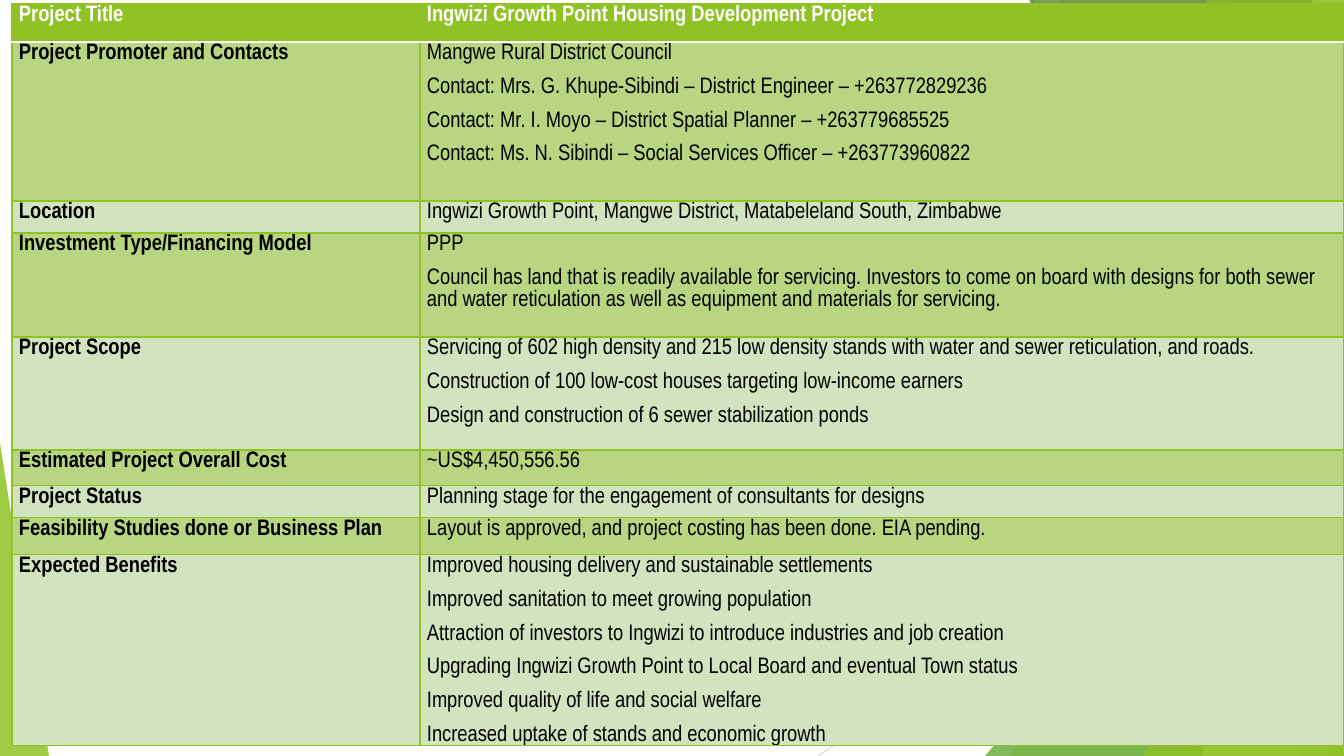
from lxml import etree
from pptx import Presentation
from pptx import util as u
from pptx.dml.color import RGBColor
from pptx.enum import shapes
from pptx.oxml.ns import qn

PX = 914400 / 100.8  # EMU in one px
WIDTH, HEIGHT = 1344, 756
COLORS = {
    "green": "90C226", "leaf": "54A021", "forest": "3F7819", "lime": "C0E474",
    "band_dark": "B8D682", "band_light": "D2E4BF",
    "line_dark": "BFBFBF", "line_light": "D9D9D9",
    "white": "FFFFFF", "black": "000000",
}


def write_text(text_frame, lines, size=16, font="Arial Narrow", color="black", bold=False):
    for index, line in enumerate(lines):
        paragraph = text_frame.paragraphs[0] if index == 0 else text_frame.add_paragraph()
        paragraph.line_spacing = 1.07
        paragraph.space_after = u.Pt(8)
        run = paragraph.add_run()
        run.text = line
        run.font.size = u.Pt(size)
        run.font.name = font
        run.font.bold = bold
        run.font.color.rgb = RGBColor.from_string(COLORS[color])


def paint(shape, color, opacity):
    shape.shadow.inherit = False
    shape.line.fill.background()
    shape.fill.solid()
    shape.fill.fore_color.rgb = RGBColor.from_string(COLORS[color])
    color_element = shape._element.spPr.find(qn("a:solidFill"))[0]
    etree.SubElement(color_element, qn("a:alpha"), val=str(opacity * 1000))


presentation = Presentation()
presentation.slide_width = round(WIDTH * PX)
presentation.slide_height = round(HEIGHT * PX)
slide = presentation.slides.add_slide(presentation.slide_layouts[6])

# Thin background lines
for ends, color in [((1033, 0, 1167, HEIGHT), "line_dark"),
                    ((WIDTH, 406, 818, HEIGHT), "line_light")]:
    connector = slide.shapes.add_connector(
        shapes.MSO_CONNECTOR.STRAIGHT, *[round(value * PX) for value in ends])
    connector.line.color.rgb = RGBColor.from_string(COLORS[color])
    connector.line.width = u.Pt(0.75)
    etree.SubElement(connector._element.spPr, qn("a:effectLst"))

# Translucent facets: slanted bands reaching the right edge, and triangles
FACETS = [
    ("band", (1238, 1012), "green", 30),
    ("band", (1058, 1192), "green", 20),
    ("triangle", (985, 336, 359, 420, 1), "leaf", 72),
    ("band", (1029, 1301), "forest", 70),
    ("band", (1313, 1202), "lime", 70),
    ("band", (1206, 1329), "green", 65),
    ("triangle", (1143, 396, 201, 360, 1), "green", 80),
    ("triangle", (0, 443, 49, 313, 0), "green", 85),
]
for kind, geometry, color, opacity in FACETS:
    if kind == "band":
        top_x, bottom_x = geometry
        builder = slide.shapes.build_freeform(top_x, -1, scale=PX)
        builder.add_line_segments([(WIDTH, -1), (WIDTH, HEIGHT), (bottom_x, HEIGHT)])
        facet = builder.convert_to_shape()
    else:
        *box, apex = geometry
        facet = slide.shapes.add_shape(
            shapes.MSO_SHAPE.ISOSCELES_TRIANGLE, *[round(value * PX) for value in box])
        facet.adjustments[0] = apex
    paint(facet, color, opacity)

# Project table: row height, label, details
ROWS = [
    (38, "Project Title", ["Ingwizi Growth Point Housing Development Project"]),
    (159, "Project Promoter and Contacts", [
        "Mangwe Rural District Council",
        "Contact: Mrs. G. Khupe-Sibindi – District Engineer – +263772829236",
        "Contact: Mr. I. Moyo – District Spatial Planner – +263779685525",
        "Contact: Ms. N. Sibindi – Social Services Officer – +263773960822"]),
    (32, "Location", ["Ingwizi Growth Point, Mangwe District, Matabeleland South, Zimbabwe"]),
    (104, "Investment Type/Financing Model", [
        "PPP",
        "Council has land that is readily available for servicing. Investors to come on board "
        "with designs for both sewer and water reticulation as well as equipment and materials "
        "for servicing."]),
    (113, "Project Scope", [
        "Servicing of 602 high density and 215 low density stands with water and sewer "
        "reticulation, and roads.",
        "Construction of 100 low-cost houses targeting low-income earners",
        "Design and construction of 6 sewer stabilization ponds"]),
    (36, "Estimated Project Overall Cost", ["~US$4,450,556.56"]),
    (32, "Project Status", ["Planning stage for the engagement of consultants for designs"]),
    (37, "Feasibility Studies done or Business Plan", [
        "Layout is approved, and project costing has been done. EIA pending."]),
    (191, "Expected Benefits", [
        "Improved housing delivery and sustainable settlements",
        "Improved sanitation to meet growing population",
        "Attraction of investors to Ingwizi to introduce industries and job creation",
        "Upgrading Ingwizi Growth Point to Local Board and eventual Town status",
        "Improved quality of life and social welfare",
        "Increased uptake of stands and economic growth"]),
]
COLUMNS = [408, 924]
table_height = sum(height for height, _, _ in ROWS)
table = slide.shapes.add_table(
    len(ROWS), len(COLUMNS),
    *[round(value * PX) for value in (12, 4, sum(COLUMNS), table_height)]).table
table.horz_banding = False
for column, width in zip(table.columns, COLUMNS):
    column.width = round(width * PX)

for row_index, (height, label, details) in enumerate(ROWS):
    table.rows[row_index].height = round(height * PX)
    header = row_index == 0
    band = "green" if header else "band_dark" if row_index % 2 else "band_light"
    for column_index, lines in enumerate([[label], details]):
        cell = table.cell(row_index, column_index)
        cell.margin_left = cell.margin_right = round(7 * PX)
        cell.margin_top = cell.margin_bottom = 0
        write_text(cell.text_frame, lines, color="white" if header else "black",
                   bold=header or column_index == 0)

        # Borders: green, with a white rule under the header
        cell_properties = cell._tc.get_or_add_tcPr()
        for side in "LRTB":
            under_header = (row_index, side) in [(0, "B"), (1, "T")]
            border = etree.SubElement(cell_properties, qn("a:ln" + side),
                                      w=str(u.Pt(1.5 if under_header else 1)))
            border_fill = etree.SubElement(border, qn("a:solidFill"))
            etree.SubElement(border_fill, qn("a:srgbClr"),
                             val=COLORS["white" if under_header else "green"])
        cell.fill.solid()
        cell.fill.fore_color.rgb = RGBColor.from_string(COLORS[band])

presentation.save("out.pptx")
